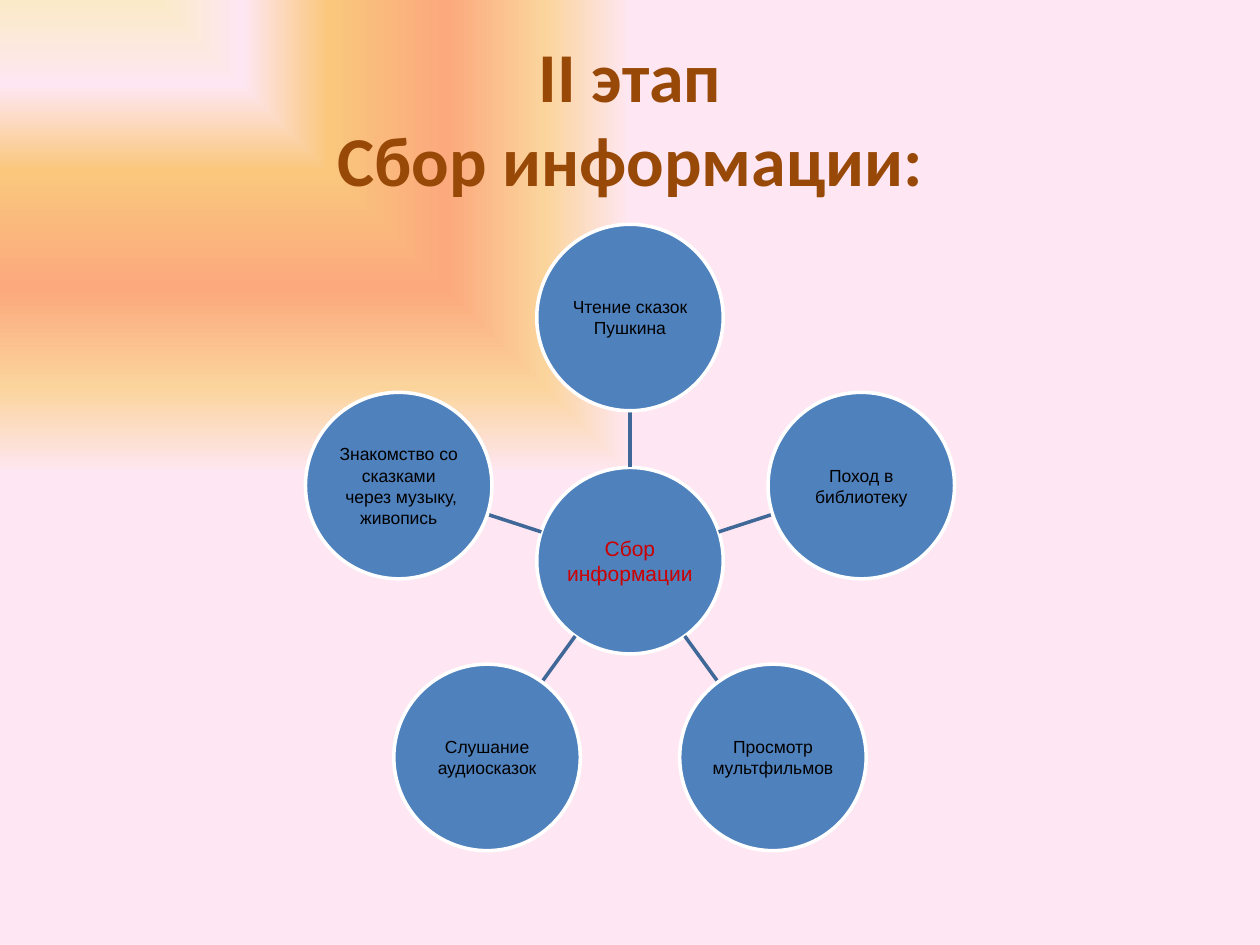
from dataclasses import dataclass
from math import cos, radians, sin

from pptx import Presentation
from pptx.dml.color import RGBColor
from pptx.enum.shapes import MSO_CONNECTOR, MSO_SHAPE
from pptx.enum.text import MSO_ANCHOR, PP_ALIGN
from pptx.oxml import parse_xml
from pptx.oxml.ns import nsdecls, qn
from pptx.slide import Slide
from pptx.util import Inches, Pt

COLORS = {
    "title": "984807",
    "circle": "4F81BD",
    "outline": "FFFFFF",
    "spoke": "3F6797",
    "hub_text": "CC0000",
    "text": "000000",
}
BACKGROUND_STOPS = [
    (0, "FBEAC7"), (18, "FEE7F2"), (36, "FAC77D"),
    (61, "FBA97D"), (82, "FBD49C"), (100, "FEE7F2"),
]
HUB_X, HUB_Y = 5, 4.45
DIAMETER = 1.48
RADIUS = DIAMETER / 2
ORBIT = 1.93
LINE_WIDTH = Pt(2)


@dataclass
class Topic:
    text: str
    size: int = 10
    color: str = "text"


HUB = Topic("Сбор информации", 12, "hub_text")
SATELLITES = [
    Topic("Чтение сказок Пушкина"),
    Topic("Поход в библиотеку"),
    Topic("Просмотр мультфильмов"),
    Topic("Слушание аудиосказок"),
    Topic("Знакомство со сказками\n через музыку, живопись"),
]


def rgb(name: str) -> RGBColor:
    return RGBColor.from_string(COLORS[name])


def format_text(frame, font_format: dict, color: str) -> None:
    frame.word_wrap = True
    frame.vertical_anchor = MSO_ANCHOR.MIDDLE
    for paragraph in frame.paragraphs:
        paragraph.alignment = PP_ALIGN.CENTER
        for run in paragraph.runs:
            for attribute, value in font_format.items():
                setattr(run.font, attribute, value)
            run.font.color.rgb = rgb(color)


def paint_background(slide: Slide) -> None:
    """Fill with a rectangular gradient that starts in the top left corner."""
    slide.background.fill.gradient()
    default = slide.element.find(".//" + qn("a:gradFill"))
    stops = "".join(
        f'<a:gs pos="{percent * 1000}"><a:srgbClr val="{color}"/></a:gs>'
        for percent, color in BACKGROUND_STOPS
    )
    gradient = parse_xml(
        f'<a:gradFill {nsdecls("a")} rotWithShape="1"><a:gsLst>{stops}</a:gsLst>'
        '<a:path path="rect"><a:fillToRect r="100000" b="100000"/></a:path>'
        "</a:gradFill>"
    )
    default.getparent().replace(default, gradient)


def add_title(slide: Slide, text: str) -> None:
    title = slide.shapes.title
    place = {"left": 0.5, "top": 0.3, "width": 9, "height": 1.25}
    for attribute, value in place.items():
        setattr(title, attribute, Inches(value))
    title.text_frame.text = text
    format_text(title.text_frame, {"name": "Calibri", "size": Pt(40), "bold": True}, "title")


def orbit_point(angle: float, distance: float) -> tuple[float, float]:
    return (HUB_X + distance * cos(radians(angle)),
            HUB_Y + distance * sin(radians(angle)))


def add_circle(slide: Slide, topic: Topic, x: float, y: float) -> None:
    circle = slide.shapes.add_shape(
        MSO_SHAPE.OVAL, Inches(x - RADIUS), Inches(y - RADIUS),
        Inches(DIAMETER), Inches(DIAMETER))
    circle.shadow.inherit = False
    circle.fill.solid()
    circle.fill.fore_color.rgb = rgb("circle")
    circle.line.color.rgb = rgb("outline")
    circle.line.width = LINE_WIDTH
    frame = circle.text_frame
    for side in ("left", "top", "right", "bottom"):
        setattr(frame, f"margin_{side}", Inches(0.01))
    frame.text = topic.text
    format_text(frame, {"name": "Arial", "size": Pt(topic.size)}, topic.color)


def add_spoke(slide: Slide, angle: float) -> None:
    ends = orbit_point(angle, RADIUS) + orbit_point(angle, ORBIT - RADIUS)
    spoke = slide.shapes.add_connector(MSO_CONNECTOR.STRAIGHT, *map(Inches, ends))
    spoke.line.color.rgb = rgb("spoke")
    spoke.line.width = LINE_WIDTH
    spoke.element.spPr.append(parse_xml(f'<a:effectLst {nsdecls("a")}/>'))


def main() -> None:
    deck = Presentation()
    deck.slide_width, deck.slide_height = Inches(10), Inches(7.5)
    slide = deck.slides.add_slide(deck.slide_layouts.get_by_name("Title Only"))
    paint_background(slide)
    add_title(slide, "II этап\vСбор информации:")
    add_circle(slide, HUB, HUB_X, HUB_Y)
    for index, topic in enumerate(SATELLITES):
        angle = -90 + index * 360 / len(SATELLITES)
        add_spoke(slide, angle)
        add_circle(slide, topic, *orbit_point(angle, ORBIT))
    deck.save("out.pptx")


if __name__ == "__main__":
    main()
